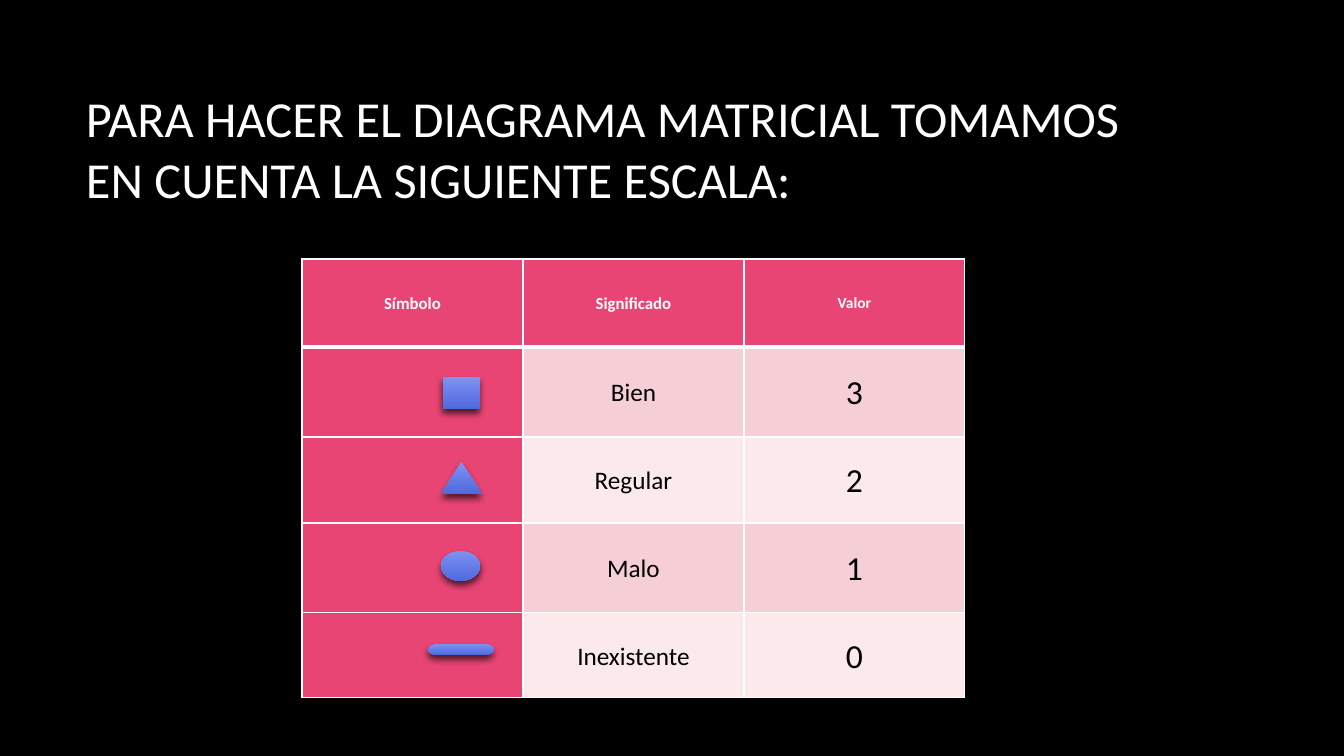
from lxml.etree import SubElement
from pptx import Presentation
from pptx.dml.color import RGBColor
from pptx.enum.shapes import MSO_SHAPE as Shape
from pptx.enum.text import MSO_ANCHOR as Anchor, PP_ALIGN as Align
from pptx.oxml.ns import qn
from pptx.util import Emu, Pt

BLACK = RGBColor(0x00, 0x00, 0x00)
WHITE = RGBColor(0xFF, 0xFF, 0xFF)
PINK = RGBColor(0xE8, 0x45, 0x74)
ROSE = RGBColor(0xF6, 0xCF, 0xD6)
PALE_ROSE = RGBColor(0xFB, 0xE9, 0xEB)
LIGHT_BLUE = RGBColor(0x7E, 0x92, 0xF2)
BLUE = RGBColor(0x50, 0x6A, 0xDE)

EMU_PER_PX = 914400 / 100.8


def px(length):
    return Emu(round(length * EMU_PER_PX))


def add_color(parent, color):
    return SubElement(parent, qn("a:srgbClr"), val=str(color))


class SlideBuilder:
    font_name = "Calibri"

    def __init__(self, presentation):
        self.slide = presentation.slides.add_slide(presentation.slide_layouts[6])

    def background(self, color):
        fill = self.slide.background.fill
        fill.solid()
        fill.fore_color.rgb = color

    def set_text(self, frame, text, size, color, bold=False, **paragraph_format):
        paragraph = frame.paragraphs[0]
        paragraph.text = text
        for name, value in paragraph_format.items():
            setattr(paragraph, name, value)
        font = paragraph.runs[0].font
        for name, value in {"name": self.font_name, "size": Pt(size), "bold": bold}.items():
            setattr(font, name, value)
        font.color.rgb = color

    def title(self, text, box, size):
        frame = self.slide.shapes.add_textbox(*map(px, box)).text_frame
        frame.word_wrap = True
        frame.vertical_anchor = Anchor.MIDDLE
        self.set_text(frame, text, size, WHITE)

    def table(self, left, top, column_width, column_count, row_heights):
        size = px(column_width * column_count), px(sum(row_heights))
        table = self.slide.shapes.add_table(
            len(row_heights), column_count, px(left), px(top), *size).table
        table.first_row = table.horz_banding = False
        for column in table.columns:
            column.width = px(column_width)
        for row, height in zip(table.rows, row_heights):
            row.height = px(height)
        return table

    def cell(self, cell, fill, borders, text="", size=18, color=BLACK, bold=False):
        properties = cell._tc.get_or_add_tcPr()
        for side, width in borders.items():
            line = SubElement(properties, qn(f"a:ln{side}"), w=str(Pt(width)))
            add_color(SubElement(line, qn("a:solidFill")), WHITE)
        cell.fill.solid()
        cell.fill.fore_color.rgb = fill
        layout = {"vertical_anchor": Anchor.MIDDLE, "margin_left": px(7),
                  "margin_right": px(7), "margin_top": 0, "margin_bottom": 0}
        for name, value in layout.items():
            setattr(cell, name, value)
        if text:
            self.set_text(cell.text_frame, text, size, color, bold,
                          alignment=Align.CENTER, line_spacing=1.07)

    def symbol(self, kind, box):
        shape = self.slide.shapes.add_shape(kind, *map(px, box))
        shape.line.fill.background()
        shape.fill.gradient()
        shape.fill.gradient_angle = 270
        for stop, color, position in zip(shape.fill.gradient_stops, (LIGHT_BLUE, BLUE), (0, 1)):
            stop.color.rgb = color
            stop.position = position
        # Soft shadow straight below
        shape.shadow.inherit = False
        effects = shape._element.spPr.find(qn("a:effectLst"))
        shadow = SubElement(effects, qn("a:outerShdw"), blurRad=str(Pt(5)),
                            dist=str(Pt(3)), dir="5400000", rotWithShape="0")
        SubElement(add_color(shadow, BLACK), qn("a:alpha"), val="65000")


def main():
    presentation = Presentation()
    presentation.slide_width, presentation.slide_height = px(1344), px(756)
    builder = SlideBuilder(presentation)
    builder.background(BLACK)

    # Title
    builder.title("PARA HACER EL DIAGRAMA MATRICIAL TOMAMOS EN CUENTA LA SIGUIENTE ESCALA:",
                  (76, 68, 1117, 160), 36)

    # Scale table: header row, then one row per symbol
    headers = [("Símbolo", 12), ("Significado", 12), ("Valor", 11)]
    scale = [("Bien", "3"), ("Regular", "2"), ("Malo", "1"), ("Inexistente", "0")]
    table = builder.table(302, 259, 221, len(headers), [88, 90, 86, 90, 85])
    thin = {"L": 1, "R": 1, "T": 1, "B": 1}
    for column, (text, size) in enumerate(headers):
        builder.cell(table.cell(0, column), PINK, thin | {"B": 3}, text, size, WHITE, True)
    for row, (meaning, value) in enumerate(scale, 1):
        borders = thin | {"T": 3} if row == 1 else thin
        band = ROSE if row % 2 else PALE_ROSE
        builder.cell(table.cell(row, 0), PINK, borders)
        builder.cell(table.cell(row, 1), band, borders, meaning, 18)
        builder.cell(table.cell(row, 2), band, borders, value, 24)

    # Symbols in the first column
    for kind, box in [
        (Shape.RECTANGLE, (443, 377, 37, 32)),
        (Shape.ISOSCELES_TRIANGLE, (441, 462, 41, 32)),
        (Shape.OVAL, (441, 551, 39, 30)),
        (Shape.FLOWCHART_TERMINATOR, (428, 644, 66, 11)),
    ]:
        builder.symbol(kind, box)

    presentation.save("out.pptx")


if __name__ == "__main__":
    main()
